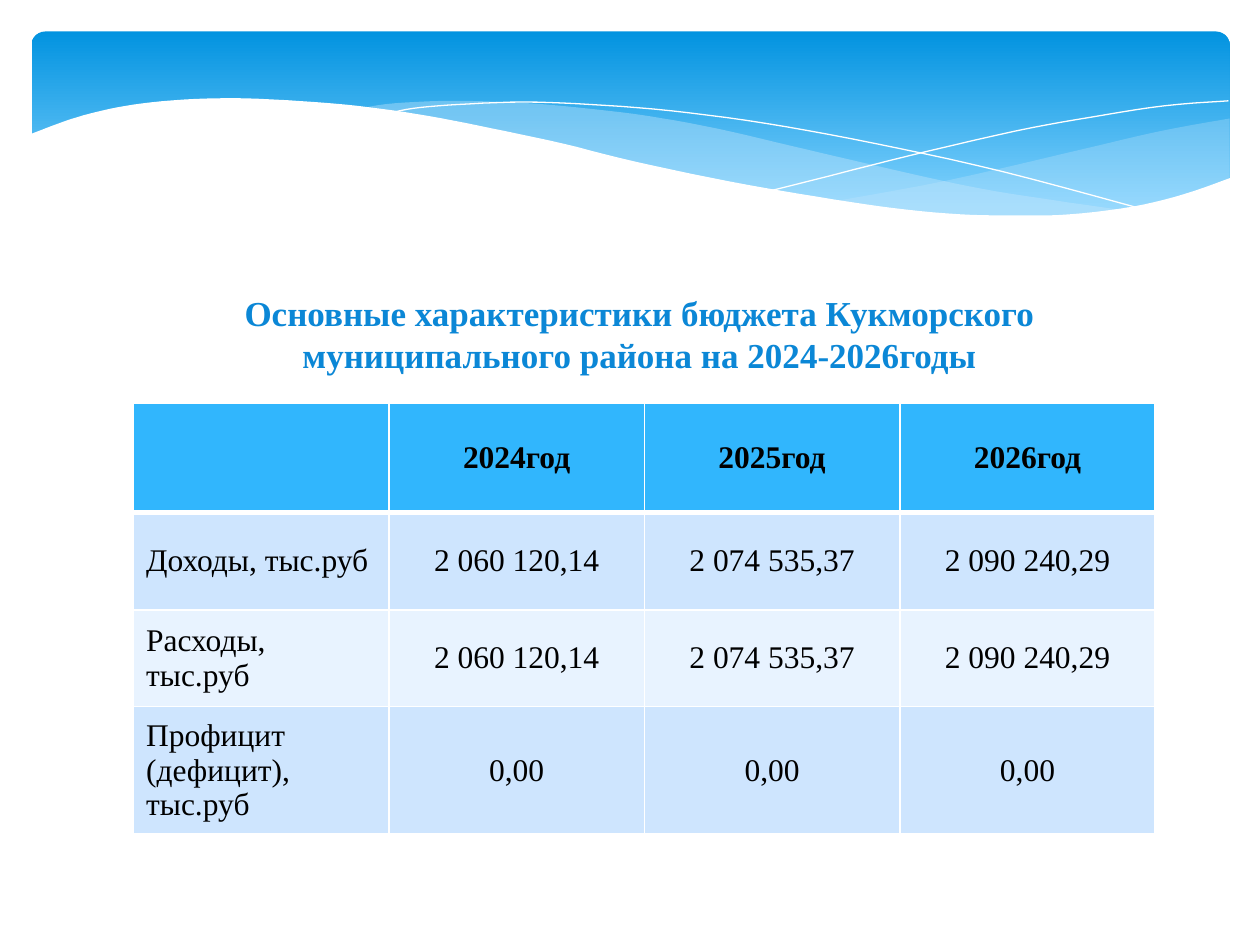
from lxml.etree import SubElement
from pptx import Presentation
from pptx.dml.color import RGBColor
from pptx.enum.shapes import MSO_SHAPE
from pptx.enum.text import MSO_ANCHOR, PP_ALIGN
from pptx.oxml.ns import qn
from pptx.util import Inches, Pt

COLORS = {
    "white": "FFFFFF", "black": "000000", "title": "0B87D6", "header": "31B6FD",
    "band_dark": "CEE5FE", "band_light": "E8F3FF",
    "sky_top": "0293E0", "sky_bottom": "83D3FE", "ribbon": "C6E7FC",
}
FONT = "Times New Roman"
UNITS_PER_INCH = 1000

RIGHT_RIBBON = [
    [(9.76, 0.94), (9.21, 1.04), (8.61, 1.18), (7.53, 1.43), (6.61, 1.6)],
    [(6.61, 1.6), (7.19, 1.67), (7.81, 1.72), (8.35, 1.72), (8.89, 1.66), (9.35, 1.56), (9.76, 1.41)],
]
LEFT_RIBBON = [
    [(8.93, 1.67), (8.37, 1.59), (7.75, 1.49), (7.06, 1.34), (6.29, 1.16), (5.69, 1.02),
     (5.14, 0.92), (4.65, 0.86), (4.2, 0.82), (3.61, 0.8), (3.13, 0.82), (2.86, 0.86)],
    [(2.86, 0.86), (3.42, 0.94), (4.04, 1.06), (4.91, 1.26), (5.66, 1.43), (6.34, 1.56),
     (6.95, 1.65), (7.48, 1.7), (8.07, 1.73), (8.48, 1.72), (8.93, 1.67)],
]
FALLING_LINE = [
    [(3.09, 0.9), (3.28, 0.86), (3.63, 0.83), (4.16, 0.81), (4.69, 0.83), (5.33, 0.88),
     (6.08, 0.98), (6.95, 1.14), (7.95, 1.36), (9.07, 1.66)],
]
RISING_LINE = [
    [(6.13, 1.51), (6.53, 1.41), (7.2, 1.24), (8.06, 1.04), (8.66, 0.93), (9.24, 0.84), (9.75, 0.8)],
]
WHITE_WAVE = [
    [(9.77, 1.41), (9.4, 1.54), (8.99, 1.64), (8.5, 1.7), (8.09, 1.71), (7.61, 1.7),
     (7.08, 1.65), (6.48, 1.56), (5.79, 1.44), (5.03, 1.28), (4.47, 1.14), (3.91, 1.02),
     (3.4, 0.92), (2.92, 0.85), (2.5, 0.81), (1.93, 0.78), (1.46, 0.79), (1.06, 0.83),
     (0.76, 0.89), (0.52, 0.96), (0.23, 1.07)],
    [(0.23, 2.24), (9.77, 2.24)],
]
BUDGET = [
    ["", "2024год", "2025год", "2026год"],
    ["Доходы, тыс.руб", "2 060 120,14", "2 074 535,37", "2 090 240,29"],
    ["Расходы, тыс.руб", "2 060 120,14", "2 074 535,37", "2 090 240,29"],
    ["Профицит (дефицит), тыс.руб", "0,00", "0,00", "0,00"],
]


def rgb(name):
    return RGBColor.from_string(COLORS[name])


def smooth_curve(knots, steps=5):
    if len(knots) < 3:
        return knots
    padded = [knots[0], *knots, knots[-1]]
    points = []
    for a, b, c, d in zip(padded, padded[1:], padded[2:], padded[3:]):
        for step in range(steps):
            t = step / steps
            points.append(tuple(
                (2 * q + (r - p) * t + (2 * p - 5 * q + 4 * r - s) * t ** 2
                 + (3 * q - p - 3 * r + s) * t ** 3) / 2
                for p, q, r, s in zip(a, b, c, d)))
    return points + [knots[-1]]


class SlideBuilder:
    def __init__(self, slide):
        self.slide = slide

    def sky(self, left, top, width, height):
        shape = self.slide.shapes.add_shape(
            MSO_SHAPE.ROUNDED_RECTANGLE, Inches(left), Inches(top), Inches(width), Inches(height))
        shape.adjustments[0] = 0.07
        shape.shadow.inherit = False
        shape.line.fill.background()
        shape.fill.gradient()
        shape.fill.gradient_angle = 270
        stops = zip(shape.fill.gradient_stops, [(0, "sky_top"), (0.9, "sky_bottom")])
        for stop, (position, color) in stops:
            stop.position = position
            stop.color.rgb = rgb(color)

    def outline(self, edges, closed):
        points = [(round(x * UNITS_PER_INCH), round(y * UNITS_PER_INCH))
                  for edge in edges for x, y in smooth_curve(edge)]
        builder = self.slide.shapes.build_freeform(*points[0], scale=Inches(1) / UNITS_PER_INCH)
        builder.add_line_segments(points[1:], close=closed)
        shape = builder.convert_to_shape()
        shape.shadow.inherit = False
        return shape

    def wave(self, edges, color, opacity=100):
        shape = self.outline(edges, closed=True)
        shape.line.fill.background()
        shape.fill.solid()
        shape.fill.fore_color.rgb = rgb(color)
        if opacity < 100:
            color_element = shape._element.spPr.find(qn("a:solidFill"))[0]
            SubElement(color_element, qn("a:alpha"), val=str(opacity * 1000))

    def hairline(self, edges):
        shape = self.outline(edges, closed=False)
        shape.fill.background()
        shape.line.color.rgb = rgb("white")
        shape.line.width = Pt(0)

    def add_text(self, paragraph, text, size, color, bold, alignment):
        paragraph.alignment = alignment
        run = paragraph.add_run()
        run.text = text
        run.font.name = FONT
        run.font.size = Pt(size)
        run.font.bold = bold
        run.font.color.rgb = rgb(color)

    def title(self, text, left, top, width, height):
        shape = self.slide.shapes.title
        shape.left, shape.top = Inches(left), Inches(top)
        shape.width, shape.height = Inches(width), Inches(height)
        frame = shape.text_frame
        frame.word_wrap = True
        frame.vertical_anchor = MSO_ANCHOR.MIDDLE
        self.add_text(frame.paragraphs[0], text, 20, "title", True, PP_ALIGN.CENTER)
        self.slide.shapes._spTree.append(shape._element)

    def borders(self, cell, widths):
        properties = cell._tc.get_or_add_tcPr()
        for side, width in widths.items():
            line = SubElement(properties, qn(f"a:ln{side}"), w=str(Pt(width)))
            fill = SubElement(line, qn("a:solidFill"))
            SubElement(fill, qn("a:srgbClr"), val=COLORS["white"])

    def table(self, rows, left, top, width, heights):
        frame = self.slide.shapes.add_table(
            len(rows), len(rows[0]), Inches(left), Inches(top), Inches(width), Inches(sum(heights)))
        table = frame.table
        for row, height in zip(table.rows, heights):
            row.height = Inches(height)
        for i, values in enumerate(rows):
            fill = "header" if i == 0 else "band_dark" if i % 2 else "band_light"
            for j, value in enumerate(values):
                cell = table.cell(i, j)
                cell.vertical_anchor = MSO_ANCHOR.MIDDLE
                self.borders(cell, {"L": 1, "R": 1, "T": 3 if i == 1 else 1, "B": 3 if i == 0 else 1})
                cell.fill.solid()
                cell.fill.fore_color.rgb = rgb(fill)
                if value:
                    alignment = PP_ALIGN.CENTER if j else PP_ALIGN.LEFT
                    self.add_text(cell.text_frame.paragraphs[0], value, 18, "black", i == 0, alignment)


def main():
    presentation = Presentation()
    presentation.slide_width, presentation.slide_height = Inches(10), Inches(7.5)
    builder = SlideBuilder(presentation.slides.add_slide(presentation.slide_layouts[5]))
    builder.sky(0.25, 0.25, 9.51, 1.56)
    builder.wave(RIGHT_RIBBON, "ribbon", 29)
    builder.wave(LEFT_RIBBON, "ribbon", 40)
    builder.hairline(FALLING_LINE)
    builder.hairline(RISING_LINE)
    builder.wave(WHITE_WAVE, "white")
    builder.table(BUDGET, 1.06, 3.2, 8.11, [0.87, 0.77, 0.77, 1.01])
    builder.title("Основные характеристики бюджета Кукморского муниципального района на 2024-2026годы",
                  0.98, 1.94, 8.19, 1.41)
    presentation.save("out.pptx")


if __name__ == "__main__":
    main()
